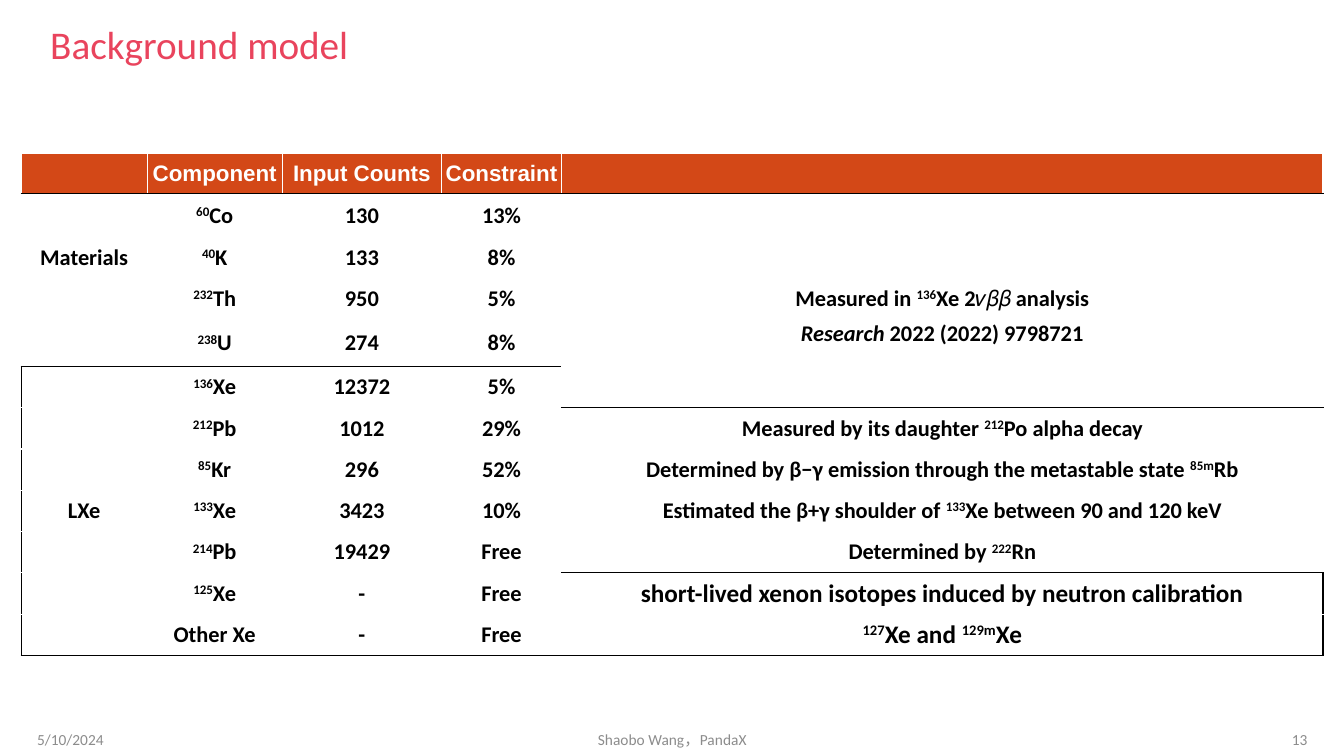
from typing import Any, NamedTuple

from lxml import etree
from pptx import Presentation
from pptx.dml.color import RGBColor
from pptx.enum.text import MSO_ANCHOR, PP_ALIGN
from pptx.oxml.ns import qn
from pptx.util import Pt

LEFT, CENTER, RIGHT = PP_ALIGN.LEFT, PP_ALIGN.CENTER, PP_ALIGN.RIGHT
MIDDLE = MSO_ANCHOR.MIDDLE
WHITE, BLACK, ORANGE, PINK, GREY = "FFFFFF", "000000", "D34817", "E9445D", "8C8C8C"


class Label(NamedTuple):
    text: str
    left: float
    top: float
    width: float
    height: float
    size: float
    color: str
    align: Any = LEFT
    spacing: float = 1.0


LABELS = [
    Label("Background model", 28.8, 5, 902, 57, 28, PINK, spacing=0.9),
    Label("5/10/2024", 19.4, 516.2, 288, 23.8, 11, GREY),
    Label("Shaobo Wang，PandaX", 318.2, 516.2, 324, 23.8, 11, GREY, CENTER),
    Label("13", 653, 516.2, 288, 23.8, 11, GREY, RIGHT),
]

# ^ encloses superscripts, * encloses italics
ROWS = [
    ("", "Component", "Input Counts", "Constraint", ""),
    ("", "^60^Co", "130", "13%", ""),
    ("Materials", "^40^K", "133", "8%", ""),
    ("", "^232^Th", "950", "5%", "Measured in ^136^Xe 2𝜈𝛽𝛽 analysis"),
    ("", "^238^U", "274", "8%", "*Research* 2022 (2022) 9798721"),
    ("", "^136^Xe", "12372", "5%", ""),
    ("", "^212^Pb", "1012", "29%", "Measured by its daughter ^212^Po alpha decay"),
    ("", "^85^Kr", "296", "52%",
     "Determined by β−γ emission through the metastable state ^85m^Rb"),
    ("LXe", "^133^Xe", "3423", "10%",
     "Estimated the β+γ shoulder of ^133^Xe between 90 and 120 keV"),
    ("", "^214^Pb", "19429", "Free", "Determined by ^222^Rn"),
    ("", "^125^Xe", "-", "Free",
     "short-lived xenon isotopes induced by neutron calibration"),
    ("", "Other Xe", "-", "Free", "^127^Xe and ^129m^Xe"),
]
COLUMN_WIDTHS = [90, 96.5, 113.8, 85.7, 544]
ROW_HEIGHTS = [29, 31, 29.5, 29.5, 33.5] + [29.5] * 7
TABLE_LEFT, TABLE_TOP = 15.1, 109.4
NOTE_COLUMN, CITATION_ROW, CALIBRATION_ROW = 4, 4, 10
LAST_ROW = len(ROWS) - 1

BLACK_BELOW = {(row, column) for row in (0, LAST_ROW) for column in range(5)}
BLACK_BELOW |= {(4, column) for column in range(NOTE_COLUMN)}
BLACK_BELOW |= {(5, NOTE_COLUMN), (CALIBRATION_ROW - 1, NOTE_COLUMN)}


def rgb(color: str) -> RGBColor:
    return RGBColor.from_string(color)


def apply(target: Any, values: dict[str, Any]) -> None:
    for name, value in values.items():
        setattr(target, name, value)


def write(para: Any, text: str, color: str, values: dict[str, Any]) -> None:
    for chunk_index, chunk in enumerate(text.split("*")):
        for piece_index, piece in enumerate(chunk.split("^")):
            if not piece:
                continue
            span = para.add_run()
            span.text = piece
            apply(span.font, values)
            span.font.color.rgb = rgb(color)
            if chunk_index % 2:
                span.font.italic = True
            if piece_index % 2:
                span._r.get_or_add_rPr().set("baseline", "30000")


def add_label(page: Any, label: Label) -> None:
    box = page.shapes.add_textbox(
        Pt(label.left), Pt(label.top), Pt(label.width), Pt(label.height))
    apply(box.text_frame, {"word_wrap": True, "vertical_anchor": MIDDLE})
    para = box.text_frame.paragraphs[0]
    apply(para, {"alignment": label.align, "line_spacing": label.spacing})
    write(para, label.text, label.color, {"name": "Calibri", "size": Pt(label.size)})


def set_borders(cell: Any, row: int, column: int) -> None:
    black_sides = {
        "L": column == 0 and row > 4,
        "R": column == NOTE_COLUMN and row >= CALIBRATION_ROW,
        "T": (row - 1, column) in BLACK_BELOW,
        "B": (row, column) in BLACK_BELOW,
    }
    properties = cell._tc.get_or_add_tcPr()
    for side, is_black in black_sides.items():
        line = etree.SubElement(properties, qn(f"a:ln{side}"), w=str(Pt(1)))
        fill = etree.SubElement(line, qn("a:solidFill"))
        etree.SubElement(fill, qn("a:srgbClr"), val=BLACK if is_black else WHITE)


def fill_cell(cell: Any, text: str, row: int, column: int) -> None:
    is_header = row == 0
    is_note = column == NOTE_COLUMN
    raised = is_note and row == CITATION_ROW
    large = is_note and row >= CALIBRATION_ROW
    apply(cell, {
        "margin_left": 0, "margin_right": 0, "margin_top": 0,
        "margin_bottom": Pt(13 if raised else 0), "vertical_anchor": MIDDLE,
    })
    set_borders(cell, row, column)
    cell.fill.solid()
    cell.fill.fore_color.rgb = rgb(ORANGE if is_header else WHITE)
    para = cell.text_frame.paragraphs[0]
    para.alignment = CENTER
    write(para, text, WHITE if is_header else BLACK, {
        "name": "Arial" if is_header else "Calibri",
        "size": Pt(18 if large else 16), "bold": True,
    })


def add_background_table(page: Any) -> None:
    frame = page.shapes.add_table(
        len(ROWS), len(COLUMN_WIDTHS), Pt(TABLE_LEFT), Pt(TABLE_TOP),
        Pt(sum(COLUMN_WIDTHS)), Pt(sum(ROW_HEIGHTS)))
    table = frame.table
    table.horz_banding = False
    for column, width in zip(table.columns, COLUMN_WIDTHS):
        column.width = Pt(width)
    for row, height in zip(table.rows, ROW_HEIGHTS):
        row.height = Pt(height)
    for row, texts in enumerate(ROWS):
        for column, text in enumerate(texts):
            fill_cell(table.cell(row, column), text, row, column)


def main() -> None:
    deck = Presentation()
    apply(deck, {"slide_width": Pt(960), "slide_height": Pt(540)})
    page = deck.slides.add_slide(deck.slide_layouts[6])
    for label in LABELS:
        add_label(page, label)
    add_background_table(page)
    deck.save("out.pptx")


if __name__ == "__main__":
    main()
